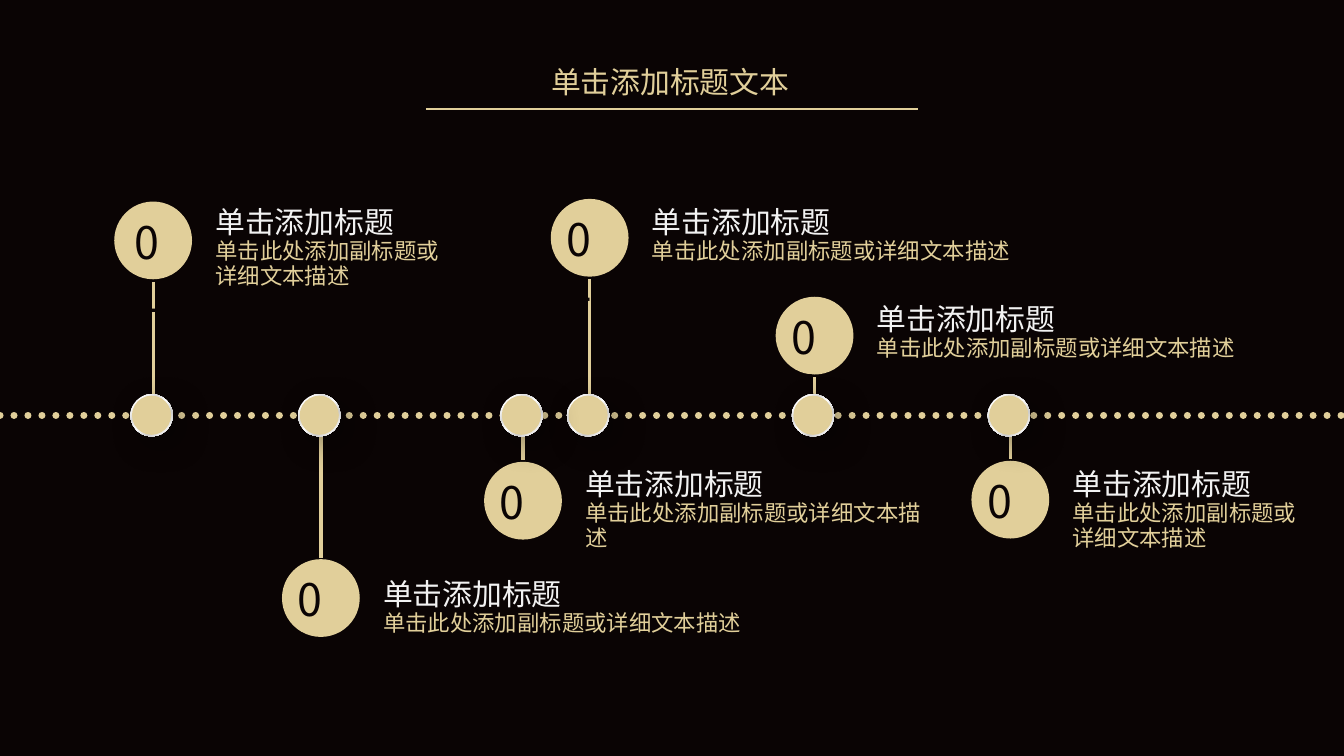
from lxml import etree
from pptx import Presentation
from pptx.dml.color import RGBColor
from pptx.enum.dml import MSO_LINE_DASH_STYLE as DASH
from pptx.enum.shapes import MSO_CONNECTOR, MSO_SHAPE
from pptx.enum.text import MSO_ANCHOR, MSO_AUTO_SIZE as AUTO_SIZE, PP_ALIGN
from pptx.oxml import parse_xml
from pptx.oxml.ns import nsdecls, qn
from pptx.util import Cm, Pt

FONT = "Noto Sans CJK SC"
GOLD, DARK, LIGHT = "E1CF9A", "0A0404", "F2F2F2"
DISC = 1.47
AXIS_Y = 7.85
rgb = RGBColor.from_string

# number, disc left, disc top, description top, description width
EVENTS = [
    ("01", 2.16, 3.81, 3.94, 4.88),
    ("02", 5.33, 10.57, 10.97, 8.38),
    ("03", 9.15, 8.73, 8.89, 6.86),
    ("04", 10.41, 3.76, 3.94, 7.32),
    ("05", 14.66, 5.61, 5.77, 7.32),
    ("06", 18.36, 8.71, 8.89, 4.98),
]
RING_STOPS = [(16, "FFFFFF"), (33, "D9D9D9"), (49, "FFFFFF"), (69, "CCCCCC"), (91, "FFFFFF")]


def format_run(paragraph, size, color):
    run = paragraph.runs[0]
    run.font.size = Pt(size)
    run.font.name = FONT
    run.font.color.rgb = rgb(color)
    etree.SubElement(run._r.get_or_add_rPr(), qn("a:ea"), typeface=FONT)


def add_circle(left, top, diameter):
    circle = slide.shapes.add_shape(MSO_SHAPE.OVAL, Cm(left), Cm(top), Cm(diameter), Cm(diameter))
    circle.shadow.inherit = False
    circle.fill.solid()
    circle.fill.fore_color.rgb = rgb(GOLD)
    circle.line.fill.background()
    return circle


presentation = Presentation()
presentation.slide_width = Cm(25.4)
presentation.slide_height = Cm(14.29)
slide = presentation.slides.add_slide(presentation.slide_layouts[5])
slide.background.fill.solid()
slide.background.fill.fore_color.rgb = rgb(DARK)

# Title
title = slide.shapes.title
title.left, title.top, title.width, title.height = Cm(10.16), Cm(0.74), Cm(5.08), Cm(1.17)
title.text_frame.text = "单击添加标题文本"
title.text_frame.word_wrap = True
title.text_frame.auto_size = AUTO_SIZE.SHAPE_TO_FIT_TEXT
title.text_frame.vertical_anchor = MSO_ANCHOR.TOP
paragraph = title.text_frame.paragraphs[0]
paragraph.alignment = PP_ALIGN.JUSTIFY
paragraph.line_spacing = 1.5
format_run(paragraph, 16, GOLD)

# Stems, timeline axis and title rule: x1, y1, x2, y2, width, dash
lines = []
for number, left, top, text_top, text_width in EVENTS:
    x = left + DISC / 2
    if top < AXIS_Y:
        start, end = top + DISC + 0.05, 7.59
    else:
        start, end = 8.13, top - 0.03
    lines.append((x, start, x, end, 1.75, None))
lines.append((0, AXIS_Y, 25.4, AXIS_Y, 3.75, DASH.ROUND_DOT))
lines.append((8.05, 2.06, 17.35, 2.06, 1.5, None))

for x1, y1, x2, y2, width, dash in lines:
    line = slide.shapes.add_connector(MSO_CONNECTOR.STRAIGHT, Cm(x1), Cm(y1), Cm(x2), Cm(y2))
    line.line.color.rgb = rgb(GOLD)
    line.line.width = Pt(width)
    if dash:
        line.line.dash_style = dash
        line.line._get_or_add_ln().set("cap", "rnd")
    etree.SubElement(line._element.spPr, qn("a:effectLst"))

# Numbered discs and descriptions
for number, left, top, text_top, text_width in EVENTS:
    add_circle(left, top, DISC)

    number_left = left + (0.2 if number == "01" else 0.12)
    box = slide.shapes.add_textbox(Cm(number_left), Cm(top + 0.14), Cm(1.24), Cm(1.22))
    frame = box.text_frame
    frame.word_wrap = True
    frame.auto_size = AUTO_SIZE.SHAPE_TO_FIT_TEXT
    frame.margin_left = frame.margin_right = Cm(0.18)
    frame.margin_top = frame.margin_bottom = Cm(0.1)
    frame.text = number
    format_run(frame.paragraphs[0], 24, DARK)

    box = slide.shapes.add_textbox(Cm(left + 1.66), Cm(text_top), Cm(text_width), Cm(1.2))
    frame = box.text_frame
    frame.word_wrap = True
    frame.auto_size = AUTO_SIZE.SHAPE_TO_FIT_TEXT
    frame.text = "单击添加标题\n单击此处添加副标题或详细文本描述"
    for paragraph, size, color in zip(frame.paragraphs, (16, 12), (LIGHT, GOLD)):
        paragraph.line_spacing = Pt(13.2)
        format_run(paragraph, size, color)

# Axis markers, right to left so each shadow falls on the marker behind it
stops = "".join(
    f'<a:gs pos="{position * 1000}"><a:srgbClr val="{color}"/></a:gs>'
    for position, color in RING_STOPS
)
for number, left, top, text_top, text_width in reversed(EVENTS):
    ring_left = left + DISC / 2 - 0.43
    ring = add_circle(ring_left, AXIS_Y - 0.4, 0.8)
    properties = ring._element.spPr
    properties.replace(properties.find(qn("a:solidFill")), parse_xml(
        f'<a:gradFill {nsdecls("a")}><a:gsLst>{stops}</a:gsLst>'
        '<a:lin ang="2700000" scaled="0"/></a:gradFill>'))
    properties.replace(properties.find(qn("a:effectLst")), parse_xml(
        f'<a:effectLst {nsdecls("a")}><a:outerShdw blurRad="{Pt(17)}" dist="{Pt(7)}" '
        'dir="2700000" algn="tl" rotWithShape="0"><a:srgbClr val="000000">'
        '<a:alpha val="40000"/></a:srgbClr></a:outerShdw></a:effectLst>'))
    add_circle(ring_left + 0.03, AXIS_Y - 0.37, 0.74)

presentation.save("out.pptx")
